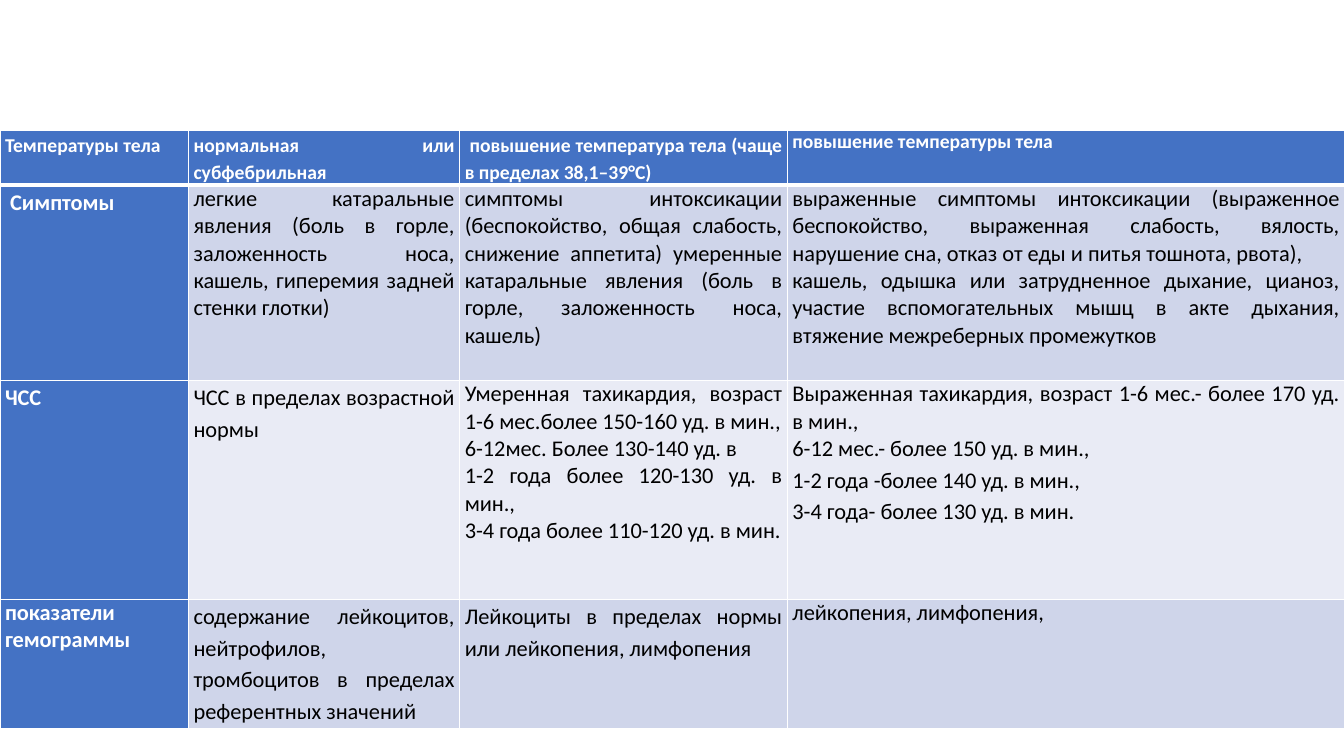
from lxml import etree
from pptx import Presentation
from pptx.dml.color import RGBColor
from pptx.enum.text import PP_ALIGN
from pptx.oxml.ns import qn
from pptx.util import Inches, Pt

JUSTIFY = PP_ALIGN.JUSTIFY
WHITE = RGBColor(0xFF, 0xFF, 0xFF)
BLACK = RGBColor(0, 0, 0)
BLUE = RGBColor(0x44, 0x72, 0xC4)
BAND_DARK = RGBColor(0xCF, 0xD5, 0xEA)
BAND_LIGHT = RGBColor(0xE9, 0xEB, 0xF5)
SINGLE, LOOSE = 1.0, 1.15
COLUMN_WIDTHS = [1.87, 2.69, 3.25, 5.53]
ROW_HEIGHTS = [0.54, 1.94, 2.17, 1.28]

SEVERITY_ROWS = [
    [
        [("Температуры тела", LOOSE)],
        [("нормальная или субфебрильная", LOOSE)],
        [(" повышение температура тела (чаще в пределах 38,1–39°С)", LOOSE)],
        [("повышение температуры тела", SINGLE)],
    ],
    [
        [(" Симптомы", LOOSE)],
        [("легкие катаральные явления (боль в горле, заложенность носа, "
          "кашель, гиперемия задней стенки глотки)", SINGLE)],
        [("симптомы интоксикации (беспокойство, общая слабость, "
          "снижение аппетита) умеренные катаральные явления (боль в горле, "
          "заложенность носа, кашель)", SINGLE)],
        [("выраженные симптомы интоксикации (выраженное беспокойство, "
          "выраженная слабость, вялость, нарушение сна, отказ от еды и питья "
          "тошнота, рвота),", SINGLE),
         ("кашель, одышка или затрудненное дыхание, цианоз, участие "
          "вспомогательных мышц в акте дыхания, втяжение межреберных "
          "промежутков", SINGLE)],
    ],
    [
        [("ЧСС", LOOSE)],
        [("ЧСС в пределах возрастной нормы", LOOSE)],
        [("Умеренная тахикардия, возраст 1-6 мес.более 150-160 уд. в мин.,", SINGLE),
         ("6-12мес. Более 130-140 уд. в", SINGLE),
         ("1-2 года более 120-130 уд. в мин.,", SINGLE),
         ("3-4 года более 110-120 уд. в мин.", SINGLE)],
        [("Выраженная тахикардия, возраст 1-6 мес.- более 170 уд. в мин.,", SINGLE),
         ("6-12 мес.- более 150 уд. в мин.,", SINGLE),
         ("1-2 года -более 140 уд. в мин.,", LOOSE),
         ("3-4 года- более 130 уд. в мин.", LOOSE)],
    ],
    [
        [("показатели гемограммы", SINGLE)],
        [("содержание лейкоцитов, нейтрофилов, тромбоцитов в пределах "
          "референтных значений", LOOSE)],
        [("Лейкоциты в пределах нормы или лейкопения, лимфопения", LOOSE)],
        [("лейкопения, лимфопения,", SINGLE)],
    ],
]


def write_paragraph(para, text, *, spacing, size, color, bold):
    """Put one justified, formatted run into a paragraph."""
    para.alignment = JUSTIFY
    para.line_spacing = spacing
    span = para.add_run()
    span.text = text
    span.font.name = "Calibri"
    span.font.size = Pt(size)
    span.font.bold = bold
    span.font.color.rgb = color


def set_borders(cell, **widths):
    """Draw white cell borders with the given widths in points."""
    properties = cell._tc.get_or_add_tcPr()
    for position, (side, width) in enumerate(widths.items()):
        line = etree.Element(qn(f"a:ln{side}"), w=str(Pt(width)))
        fill = etree.SubElement(line, qn("a:solidFill"))
        etree.SubElement(fill, qn("a:srgbClr"), val=str(WHITE))
        properties.insert(position, line)


def fill_cell(cell, paragraphs, *, fill, **text_format):
    """Set a cell's fill, margins and paragraphs."""
    cell.fill.solid()
    cell.fill.fore_color.rgb = fill
    cell.margin_left = cell.margin_right = Inches(0.05)
    cell.margin_top = cell.margin_bottom = 0
    frame = cell.text_frame
    for index, (text, spacing) in enumerate(paragraphs):
        para = frame.add_paragraph() if index else frame.paragraphs[0]
        write_paragraph(para, text, spacing=spacing, **text_format)


def add_severity_table(page):
    """Add the table of signs by severity."""
    frame = page.shapes.add_table(
        len(ROW_HEIGHTS), len(COLUMN_WIDTHS), 0, Inches(1.29),
        Inches(sum(COLUMN_WIDTHS)), Inches(sum(ROW_HEIGHTS)))
    table = frame.table
    for column, width in zip(table.columns, COLUMN_WIDTHS):
        column.width = Inches(width)
    for row, height in zip(table.rows, ROW_HEIGHTS):
        row.height = Inches(height)
    for r, row in enumerate(SEVERITY_ROWS):
        band = BAND_DARK if r % 2 else BAND_LIGHT
        for c, paragraphs in enumerate(row):
            heading = r == 0 or c == 0
            cell = table.cell(r, c)
            fill_cell(cell, paragraphs, fill=BLUE if heading else band,
                      size=16 if r else 14, bold=heading,
                      color=WHITE if heading else BLACK)
            set_borders(cell, L=1, R=1, T=3 if r == 1 else 1,
                        B=3 if r == 0 else 1)


def main():
    """Build and save the deck."""
    deck = Presentation()
    deck.slide_width = Inches(13.33)
    deck.slide_height = Inches(7.5)
    page = deck.slides.add_slide(deck.slide_layouts[6])
    add_severity_table(page)
    deck.save("out.pptx")


if __name__ == "__main__":
    main()
